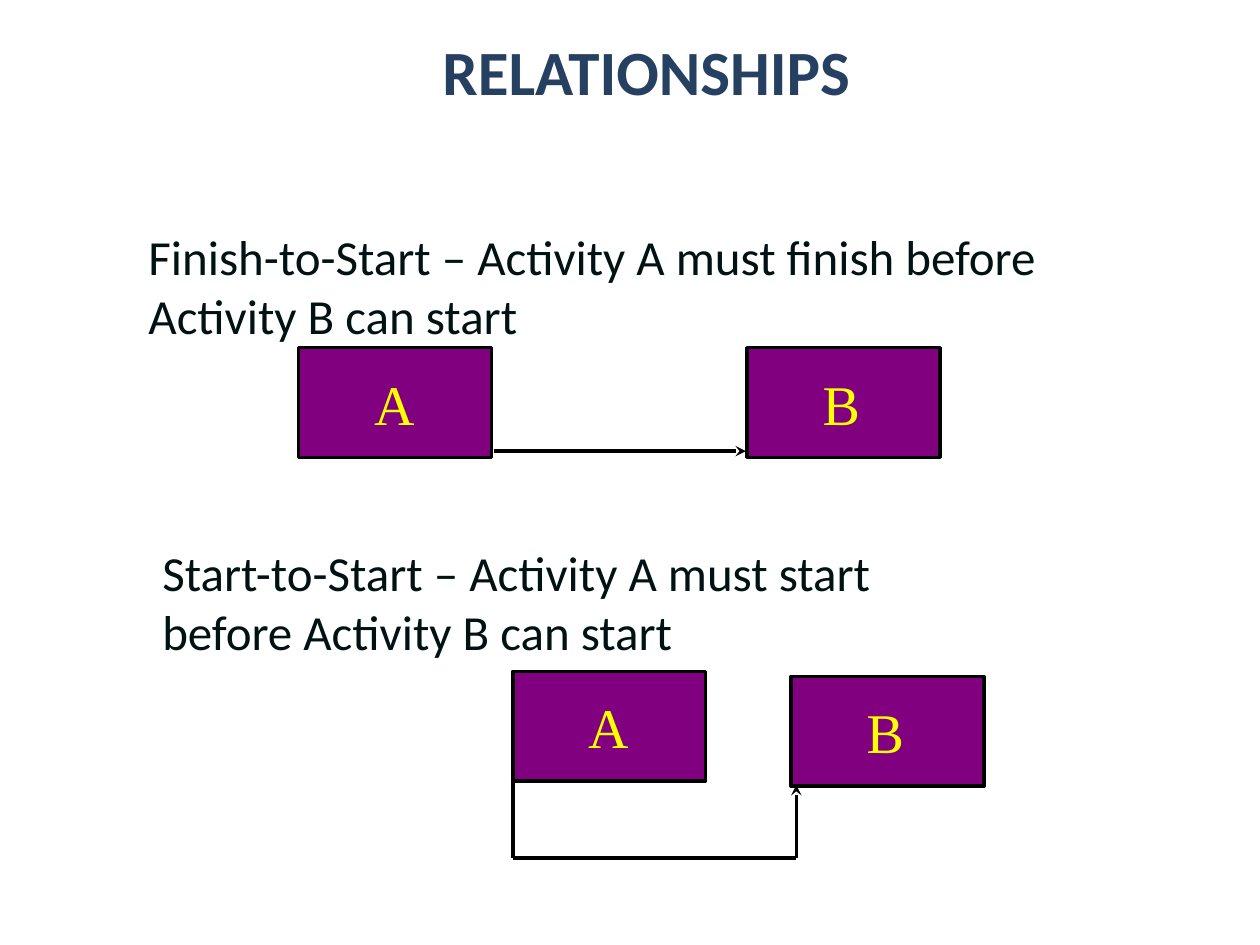
from dataclasses import dataclass

from lxml.etree import SubElement
from pptx import Presentation
from pptx.dml.color import RGBColor
from pptx.enum.shapes import MSO_CONNECTOR, MSO_SHAPE
from pptx.enum.text import MSO_ANCHOR, PP_ALIGN
from pptx.oxml.ns import qn
from pptx.util import Inches, Pt

NAVY = RGBColor(0x25, 0x40, 0x61)
INK = RGBColor(0x01, 0x12, 0x13)
PURPLE = RGBColor(0x80, 0x00, 0x80)
YELLOW = RGBColor(0xFF, 0xFF, 0x00)
BLACK = RGBColor(0x00, 0x00, 0x00)

COLUMNS, ROWS = 100, 75
SLIDE_WIDTH, SLIDE_HEIGHT = Inches(10), Inches(7.5)
LINE_WIDTH = Pt(2)
BOX_WIDTH, BOX_HEIGHT = 15.3, 8.7
LABEL_HEIGHT = 6.3
LABEL_WIDTHS = {"A": 5.2, "B": 5.0}


@dataclass(frozen=True)
class Activity:
    name: str
    column: float
    row: float


@dataclass(frozen=True)
class Relationship:
    text: str
    column: float
    row: float
    width: float
    activities: tuple
    route: tuple


RELATIONSHIPS = (
    Relationship(
        "Finish-to-Start – Activity A must finish before Activity B can start",
        10.8, 17.5, 72.5,
        (Activity("A", 23.7, 27.6), Activity("B", 59.3, 27.6)),
        ((39.2, 35.8), (59.2, 35.8)),
    ),
    Relationship(
        "Start-to-Start – Activity A must start before Activity B can start",
        11.9, 42.6, 68.7,
        (Activity("A", 40.7, 53.3), Activity("B", 62.8, 53.7)),
        ((40.7, 62.1), (40.7, 68.1), (63.2, 68.1), (63.2, 62.3)),
    ),
)


def across(columns: float) -> int:
    return round(SLIDE_WIDTH * columns / COLUMNS)


def down(rows: float) -> int:
    return round(SLIDE_HEIGHT * rows / ROWS)


def area(column: float, row: float, width: float, height: float) -> tuple:
    return across(column), down(row), across(width), down(height)


def write_text(shape, text: str, *, size: float, color: RGBColor,
               font: str = "Calibri", bold: bool = False, wrap: bool = True,
               align=PP_ALIGN.LEFT) -> None:
    frame = shape.text_frame
    frame.word_wrap = wrap
    frame.vertical_anchor = MSO_ANCHOR.TOP
    paragraph = frame.paragraphs[0]
    paragraph.alignment = align
    run = paragraph.add_run()
    run.text = text
    run.font.name = font
    run.font.size = Pt(size)
    run.font.bold = bold
    run.font.color.rgb = color


def add_rectangle(slide, *place: float):
    shape = slide.shapes.add_shape(MSO_SHAPE.RECTANGLE, *area(*place))
    shape.shadow.inherit = False
    shape.fill.solid()
    shape.fill.fore_color.rgb = PURPLE
    shape.line.fill.background()
    return shape


def draw_activity(slide, activity: Activity) -> None:
    box = add_rectangle(slide, activity.column, activity.row, BOX_WIDTH, BOX_HEIGHT)
    box.line.color.rgb = BLACK
    box.line.width = LINE_WIDTH
    width = LABEL_WIDTHS[activity.name]
    label = add_rectangle(slide, activity.column + 5, activity.row + 1.2,
                          width, LABEL_HEIGHT)
    write_text(label, activity.name, size=32, color=YELLOW,
               font="Times New Roman", wrap=False)


def draw_line(slide, start: tuple, end: tuple, arrow: bool) -> None:
    connector = slide.shapes.add_connector(
        MSO_CONNECTOR.STRAIGHT, across(start[0]), down(start[1]),
        across(end[0]), down(end[1]))
    connector.line.color.rgb = BLACK
    connector.line.width = LINE_WIDTH
    if arrow:
        SubElement(connector.line._get_or_add_ln(), qn("a:tailEnd"), type="stealth")
    SubElement(connector._element.spPr, qn("a:effectLst"))


def draw_relationship(slide, relationship: Relationship) -> None:
    caption = slide.shapes.add_textbox(
        *area(relationship.column, relationship.row, relationship.width, 10.3))
    write_text(caption, relationship.text, size=28, color=INK)
    for activity in relationship.activities:
        draw_activity(slide, activity)
    route = relationship.route
    for start, end in zip(route, route[1:]):
        draw_line(slide, start, end, arrow=end == route[-1])


def main() -> None:
    presentation = Presentation()
    presentation.slide_width = SLIDE_WIDTH
    presentation.slide_height = SLIDE_HEIGHT
    slide = presentation.slides.add_slide(presentation.slide_layouts[6])
    for relationship in RELATIONSHIPS:
        draw_relationship(slide, relationship)
    title = slide.shapes.add_textbox(*area(19.3, 2.1, 64, 7.1))
    write_text(title, "RELATIONSHIPS", size=36, color=NAVY, bold=True,
               align=PP_ALIGN.CENTER)
    presentation.save("out.pptx")


if __name__ == "__main__":
    main()
